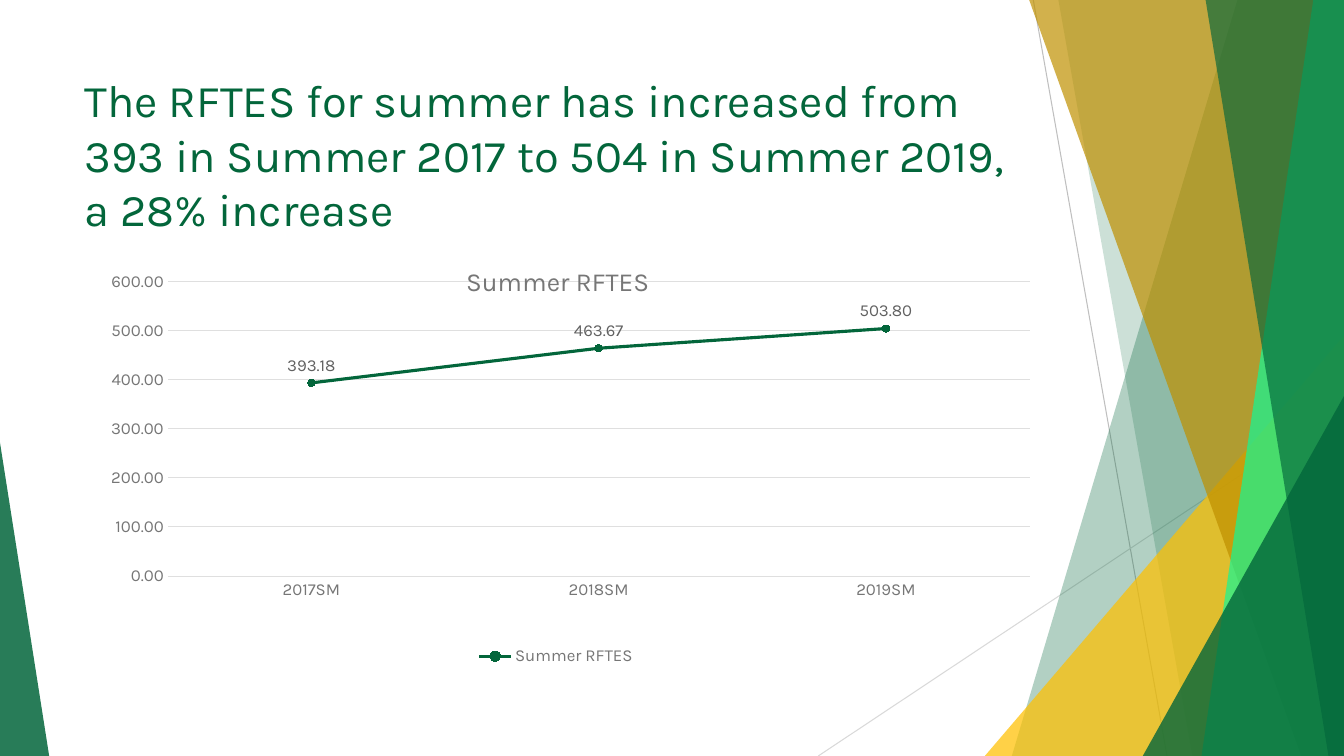
import pptx
import pptx.chart.data
import pptx.dml.color
import pptx.enum.chart
import pptx.enum.shapes
import pptx.enum.text
import pptx.oxml
import pptx.oxml.ns
import pptx.util
from pptx.util import Cm

COLORS = {
    "green": "03663B", "mint": "13F895", "yellow": "FFC000", "gold": "BF9000",
    "dark_line": "BFBFBF", "light_line": "D9D9D9", "grid": "DFDFDF",
    "axis_text": "767676", "label_text": "616161",
}
FONT = "Karla"
WIDTH, HEIGHT = 33.87, 19.05
NUMBER_FORMAT = "#,##0.00"


def color(name):
    return pptx.dml.color.RGBColor.from_string(COLORS[name])


def format_font(font, size, color_name):
    font.name = FONT
    font.size = pptx.util.Pt(size)
    font.bold = False
    font.color.rgb = color(color_name)


def format_line(line, color_name, width):
    line.color.rgb = color(color_name)
    line.width = pptx.util.Pt(width)


def fill_shape(shape, color_name, opacity):
    shape.shadow.inherit = False
    shape.line.fill.background()
    shape.fill.solid()
    shape.fill.fore_color.rgb = color(color_name)
    color_element = shape._element.spPr.find(".//" + pptx.oxml.ns.qn("a:srgbClr"))
    alpha = pptx.oxml.parse_xml(
        f'<a:alpha {pptx.oxml.ns.nsdecls("a")} val="{opacity * 1000}"/>')
    color_element.append(alpha)


def add_thin_line(slide, start, end, color_name):
    connector = slide.shapes.add_connector(
        pptx.enum.shapes.MSO_CONNECTOR.STRAIGHT,
        Cm(start[0]), Cm(start[1]), Cm(end[0]), Cm(end[1]))
    format_line(connector.line, color_name, 0.75)
    connector._element.spPr.append(pptx.oxml.parse_xml(
        f'<a:effectLst {pptx.oxml.ns.nsdecls("a")}/>'))


def add_band(slide, top_left, bottom_left, color_name, opacity):
    """Band with a slanted left side, reaching the right edge of the slide."""
    top = Cm(-0.02)
    builder = slide.shapes.build_freeform(Cm(top_left), top)
    builder.add_line_segments([
        (Cm(WIDTH), top), (Cm(WIDTH), Cm(HEIGHT)), (Cm(bottom_left), Cm(HEIGHT))])
    fill_shape(builder.convert_to_shape(), color_name, opacity)


def add_corner(slide, left, top, right, apex, color_name, opacity):
    """Right triangle standing on the bottom edge of the slide."""
    triangle = slide.shapes.add_shape(
        pptx.enum.shapes.MSO_SHAPE.ISOSCELES_TRIANGLE,
        Cm(left), Cm(top), Cm(right - left), Cm(HEIGHT - top))
    triangle.adjustments[0] = apex
    fill_shape(triangle, color_name, opacity)


def add_decoration(slide):
    add_thin_line(slide, (26.04, 0), (29.41, HEIGHT), "dark_line")
    add_thin_line(slide, (WIDTH, 10.24), (20.62, HEIGHT), "light_line")
    add_band(slide, 31.19, 25.5, "green", 30)
    add_band(slide, 26.67, 30.05, "green", 20)
    add_corner(slide, 24.82, 8.46, WIDTH, 1, "yellow", 72)
    add_band(slide, 25.93, 32.79, "gold", 70)
    add_band(slide, 33.1, 30.28, "mint", 70)
    add_band(slide, 30.38, 33.48, "green", 65)
    add_corner(slide, 28.8, 9.98, WIDTH, 1, "green", 80)
    add_corner(slide, 0, 11.15, 1.24, 0, "green", 85)


def set_title(slide, text):
    title = slide.shapes.title
    title.left, title.top = Cm(1.88), Cm(1.7)
    title.width, title.height = Cm(23.88), Cm(3.66)
    frame = title.text_frame
    frame.word_wrap = True
    frame.auto_size = pptx.enum.text.MSO_AUTO_SIZE.NONE
    frame.vertical_anchor = pptx.enum.text.MSO_ANCHOR.TOP
    paragraph = frame.paragraphs[0]
    paragraph.alignment = pptx.enum.text.PP_ALIGN.LEFT
    run = paragraph.add_run()
    run.text = text
    format_font(run.font, 32.4, "green")


def layout_xml(x, y, size=None):
    """Manual chart layout in fractions of the chart area."""
    parts = [("xMode", "edge"), ("yMode", "edge"), ("x", x), ("y", y)]
    if size:
        parts.insert(0, ("layoutTarget", "inner"))
        parts += [("w", size[0]), ("h", size[1])]
    inside = "".join(f'<c:{tag} val="{value}"/>' for tag, value in parts)
    return pptx.oxml.parse_xml(
        f'<c:layout {pptx.oxml.ns.nsdecls("c")}>'
        f"<c:manualLayout>{inside}</c:manualLayout></c:layout>")


def set_chart_title(chart, text):
    chart.has_title = True
    run = chart.chart_title.text_frame.paragraphs[0].add_run()
    run.text = text
    format_font(run.font, 18.6, "axis_text")
    element = chart.chart_title._element
    for tag in ("c:layout", "c:overlay"):
        for child in element.findall(pptx.oxml.ns.qn(tag)):
            element.remove(child)
    overlay = pptx.oxml.parse_xml(
        f'<c:overlay {pptx.oxml.ns.nsdecls("c")} val="1"/>')
    text_element = element.find(pptx.oxml.ns.qn("c:tx"))
    text_element.addnext(overlay)
    text_element.addnext(layout_xml(0.4, 0.04))


def format_axes(chart):
    for axis in (chart.category_axis, chart.value_axis):
        axis.major_tick_mark = pptx.enum.chart.XL_TICK_MARK.NONE
        axis.minor_tick_mark = pptx.enum.chart.XL_TICK_MARK.NONE
        format_font(axis.tick_labels.font, 12, "axis_text")
    format_line(chart.category_axis.format.line, "grid", 0.75)
    axis = chart.value_axis
    axis.minimum_scale, axis.maximum_scale, axis.major_unit = 0, 600, 100
    axis.format.line.fill.background()
    format_line(axis.major_gridlines.format.line, "grid", 0.75)
    axis.tick_labels.number_format = NUMBER_FORMAT
    axis.tick_labels.number_format_is_linked = False


def format_series(series):
    series.smooth = False
    format_line(series.format.line, "green", 2.25)
    marker = series.marker
    marker.style = pptx.enum.chart.XL_MARKER_STYLE.CIRCLE
    marker.size = 5
    marker.format.fill.solid()
    marker.format.fill.fore_color.rgb = color("green")
    format_line(marker.format.line, "green", 0.75)
    labels = series.data_labels
    labels.show_value = True
    labels.position = pptx.enum.chart.XL_LABEL_POSITION.ABOVE
    labels.number_format = NUMBER_FORMAT
    labels.number_format_is_linked = False
    format_font(labels.font, 12, "label_text")


def add_line_chart(slide, name, values):
    data = pptx.chart.data.CategoryChartData(number_format=NUMBER_FORMAT)
    data.categories = list(values)
    data.add_series(name, values.values())
    chart = slide.shapes.add_chart(
        pptx.enum.chart.XL_CHART_TYPE.LINE_MARKERS_STACKED,
        Cm(2.08), Cm(6.12), Cm(23.88), Cm(10.77), data).chart
    format_font(chart.font, 12, "axis_text")
    set_chart_title(chart, name)
    chart.has_legend = True
    chart.legend.position = pptx.enum.chart.XL_LEGEND_POSITION.BOTTOM
    chart.legend.include_in_layout = False
    format_font(chart.legend.font, 12, "axis_text")
    format_axes(chart)
    chart.plots[0].vary_by_categories = False
    format_series(chart.plots[0].series[0])
    # Fixed plot area
    plot_area = chart._chartSpace.chart.plotArea
    for child in plot_area.findall(pptx.oxml.ns.qn("c:layout")):
        plot_area.remove(child)
    plot_area.insert(0, layout_xml(0.09, 0.09, (0.91, 0.69)))


def main():
    presentation = pptx.Presentation()
    presentation.slide_width, presentation.slide_height = Cm(WIDTH), Cm(HEIGHT)
    slide = presentation.slides.add_slide(presentation.slide_layouts[5])
    add_decoration(slide)
    set_title(slide, "The RFTES for summer has increased from 393 in Summer 2017 "
                     "to 504 in Summer 2019, a 28% increase")
    add_line_chart(slide, "Summer RFTES",
                   {"2017SM": 393.18, "2018SM": 463.67, "2019SM": 503.8})
    presentation.save("out.pptx")


if __name__ == "__main__":
    main()
